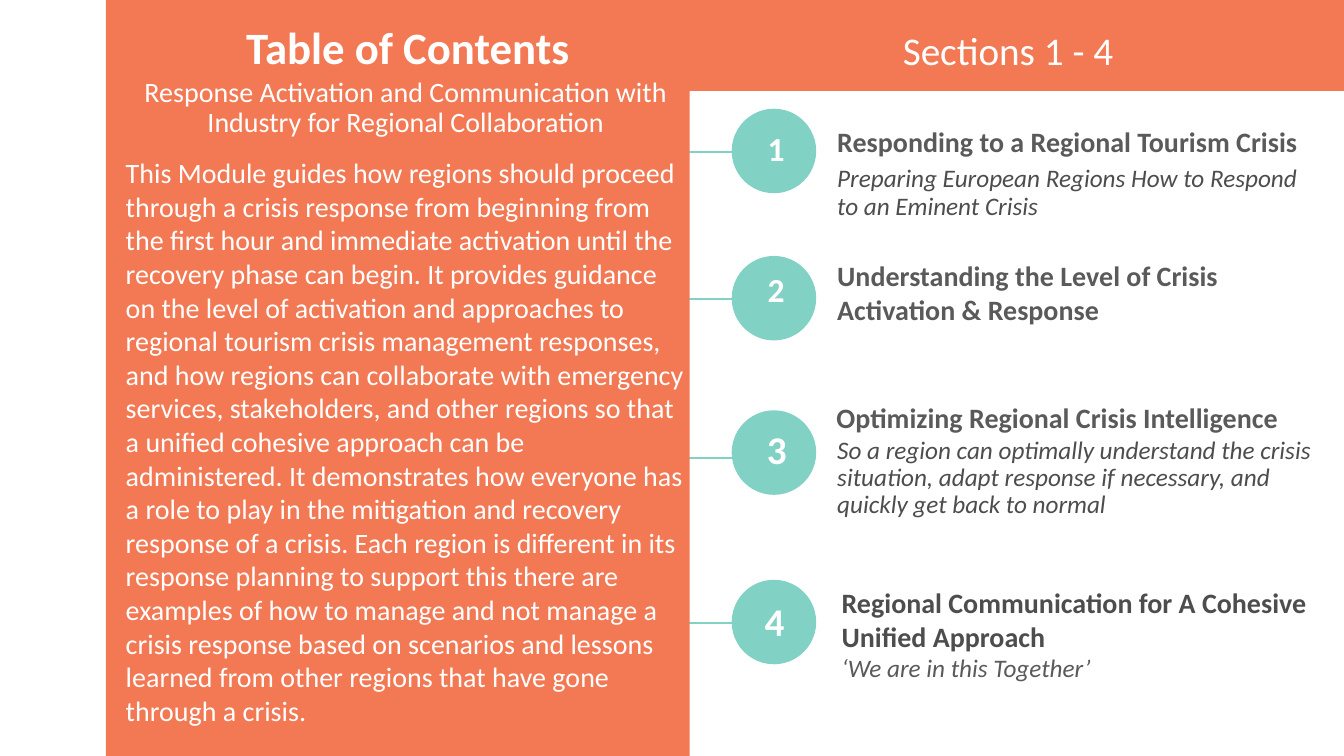
from dataclasses import dataclass

from lxml import etree
from pptx import Presentation
from pptx.dml.color import RGBColor
from pptx.enum.shapes import MSO_CONNECTOR, MSO_SHAPE
from pptx.enum.text import MSO_ANCHOR, PP_ALIGN
from pptx.oxml.ns import qn
from pptx.slide import Slide
from pptx.util import Cm, Pt

OVAL, RECTANGLE = MSO_SHAPE.OVAL, MSO_SHAPE.RECTANGLE
STRAIGHT = MSO_CONNECTOR.STRAIGHT
TOP, MIDDLE = MSO_ANCHOR.TOP, MSO_ANCHOR.MIDDLE
LEFT, CENTER = PP_ALIGN.LEFT, PP_ALIGN.CENTER

ORANGE = RGBColor(0xF2, 0x79, 0x54)
TEAL = RGBColor(0x81, 0xD1, 0xC5)
WHITE = RGBColor(0xFF, 0xFF, 0xFF)
GRAY = RGBColor(0x59, 0x5A, 0x59)
DARK_GRAY = RGBColor(0x4D, 0x4D, 0x4D)

FONT = "Calibri"
SLIDE_WIDTH, SLIDE_HEIGHT = 33.87, 19.05
CIRCLE_LEFT, CIRCLE_SIZE = 18.44, 2.13
LINE_LEFT = 16.81
HEADER_LEFT, HEADER_WIDTH = 16.94, 16.93

INTRODUCTION = (
    "This Module guides how regions should proceed through a crisis response from "
    "beginning from the first hour and immediate activation until the recovery phase "
    "can begin. It provides guidance on the level of activation and approaches to "
    "regional tourism crisis management responses, and how regions can collaborate "
    "with emergency services, stakeholders, and other regions so that a unified "
    "cohesive approach can be administered. It demonstrates how everyone has a role "
    "to play in the mitigation and recovery response of a crisis. Each region is "
    "different in its response planning to support this there are examples of how to "
    "manage and not manage a crisis response based on scenarios and lessons learned "
    "from other regions that have gone through a crisis."
)


@dataclass
class Box:
    """Position and size in centimetres."""
    left: float
    top: float
    width: float
    height: float

    def lengths(self) -> tuple[Cm, Cm, Cm, Cm]:
        return Cm(self.left), Cm(self.top), Cm(self.width), Cm(self.height)


@dataclass
class Line:
    """One paragraph with a single style."""
    text: str
    size: int
    color: RGBColor = WHITE
    bold: bool = False
    italic: bool = False
    align: PP_ALIGN = LEFT
    spacing: float = 1.0
    before: int = 0


@dataclass
class TextBlock:
    box: Box
    lines: list[Line]
    anchor: MSO_ANCHOR = MIDDLE


@dataclass
class Section:
    circle_top: float
    line_top: float
    number: TextBlock
    texts: list[TextBlock]


def number(text: str, size: int, box: Box) -> TextBlock:
    return TextBlock(box, [Line(text, size, bold=True, align=CENTER, spacing=0.9)])


def heading(text: str, color: RGBColor = GRAY) -> Line:
    return Line(text, 20, color, bold=True)


def detail(text: str, top: float) -> TextBlock:
    line = Line(text, 18, DARK_GRAY, italic=True, spacing=0.9)
    return TextBlock(Box(20.85, top, 12.5, 3.02), [line], TOP)


SECTIONS = [
    Section(2.74, 3.84, number("1", 24, Box(18.85, 2.92, 1.42, 1.75)), [
        TextBlock(Box(20.85, 2.41, 12.4, 2.29),
                  [heading("Responding to a Regional Tourism Crisis")]),
        detail("Preparing European Regions How to Respond to an Eminent Crisis", 4.06),
    ]),
    Section(6.45, 7.54, number("2", 24, Box(18.85, 6.48, 1.42, 1.75)), [
        TextBlock(Box(20.85, 6.22, 12.4, 2.29),
                  [heading("Understanding the Level of Crisis Activation & Response")]),
    ]),
    Section(10.34, 11.53, number("3", 28, Box(18.87, 10.52, 1.42, 1.75)), [
        TextBlock(Box(20.83, 9.37, 12.4, 2.29),
                  [heading("Optimizing Regional Crisis Intelligence")]),
        detail("So a region can optimally understand the crisis situation, adapt "
               "response if necessary, and quickly get back to normal", 10.9),
    ]),
    Section(14.61, 15.7, number("4", 28, Box(18.87, 14.83, 1.3, 1.8)), [
        TextBlock(Box(20.96, 14.2, 12.4, 3.56), [
            heading("Regional Communication for A Cohesive Unified Approach", DARK_GRAY),
            Line("‘We are in this Together’", 18, GRAY, italic=True),
        ]),
    ]),
]

PANEL_TEXTS = [
    TextBlock(Box(3.61, 0.53, 13.34, 1.68),
              [Line("Table of Contents", 32, bold=True, align=CENTER, spacing=0.9)], TOP),
    TextBlock(Box(2.92, 1.85, 14.61, 16.9), [
        Line("Response Activation and Communication with Industry for Regional "
             "Collaboration", 20, align=CENTER, spacing=0.9),
        Line(INTRODUCTION, 20, before=12),
    ], TOP),
    TextBlock(Box(HEADER_LEFT, 0.53, HEADER_WIDTH, 1.45),
              [Line("Sections 1 - 4", 28, align=CENTER)]),
]


def add_filled_shape(slide: Slide, kind: MSO_SHAPE, box: Box, color: RGBColor) -> None:
    shape = slide.shapes.add_shape(kind, *box.lengths())
    shape.shadow.inherit = False
    shape.fill.solid()
    shape.fill.fore_color.rgb = color
    shape.line.fill.background()


def add_text(slide: Slide, block: TextBlock) -> None:
    frame = slide.shapes.add_textbox(*block.box.lengths()).text_frame
    frame.word_wrap = True
    frame.vertical_anchor = block.anchor
    for index, line in enumerate(block.lines):
        paragraph = frame.add_paragraph() if index else frame.paragraphs[0]
        paragraph.alignment = line.align
        paragraph.line_spacing = line.spacing
        paragraph.space_before = Pt(line.before)
        run = paragraph.add_run()
        run.text = line.text
        font = run.font
        font.name, font.size = FONT, Pt(line.size)
        font.bold, font.italic = line.bold, line.italic
        font.color.rgb = line.color


def add_marker(slide: Slide, section: Section) -> None:
    """Draw the numbered circle's disc and the line that ties it to the panel."""
    circle = Box(CIRCLE_LEFT, section.circle_top, CIRCLE_SIZE, CIRCLE_SIZE)
    add_filled_shape(slide, OVAL, circle, TEAL)
    height = Cm(section.line_top)
    connector = slide.shapes.add_connector(
        STRAIGHT, Cm(LINE_LEFT), height, Cm(CIRCLE_LEFT), height)
    connector.line.color.rgb = TEAL
    connector.line.width = Pt(1.5)
    etree.SubElement(connector._element.spPr, qn("a:effectLst"))


def main() -> None:
    presentation = Presentation()
    presentation.slide_width = Cm(SLIDE_WIDTH)
    presentation.slide_height = Cm(SLIDE_HEIGHT)
    slide = presentation.slides.add_slide(presentation.slide_layouts[6])

    for section in SECTIONS:
        add_marker(slide, section)
    add_filled_shape(slide, RECTANGLE, Box(2.67, 0, 14.71, SLIDE_HEIGHT), ORANGE)
    add_filled_shape(slide, RECTANGLE, Box(HEADER_LEFT, 0, HEADER_WIDTH, 2.29), ORANGE)

    for block in PANEL_TEXTS:
        add_text(slide, block)
    for section in SECTIONS:
        for block in [section.number, *section.texts]:
            add_text(slide, block)
    presentation.save("out.pptx")


if __name__ == "__main__":
    main()
